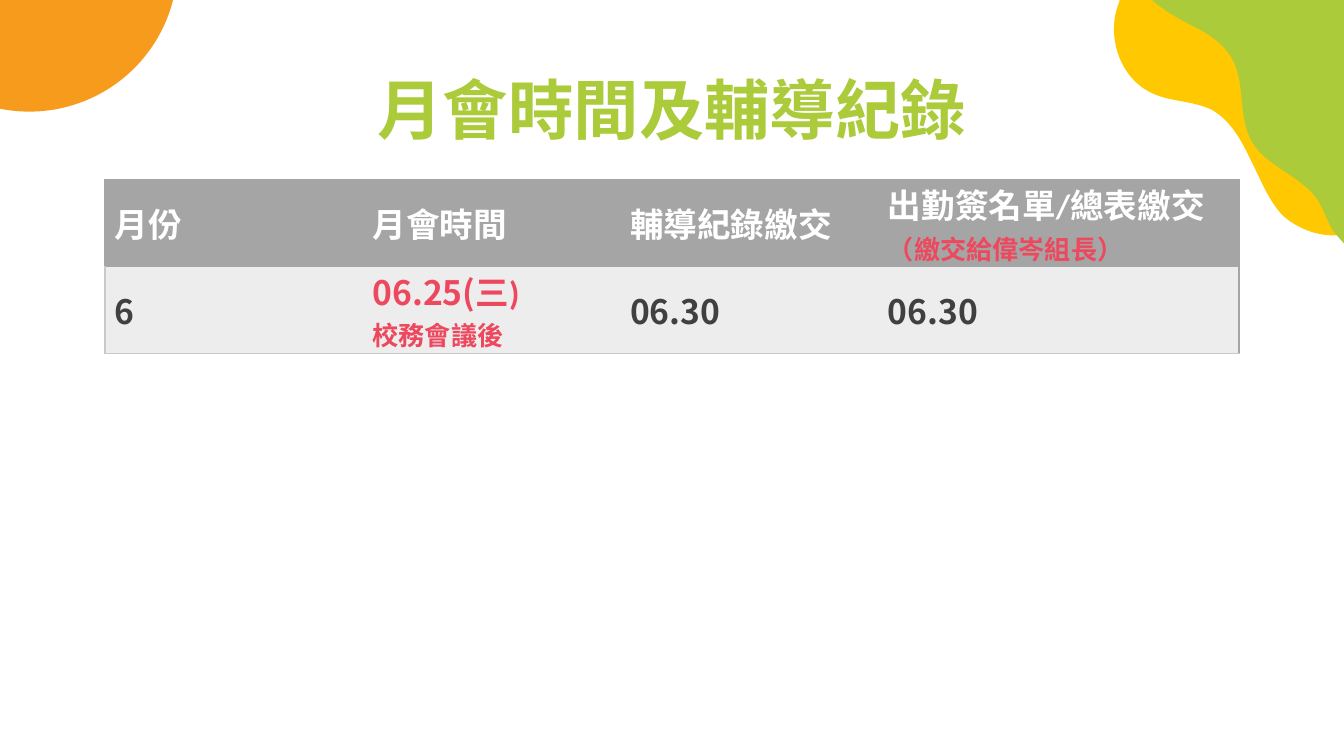
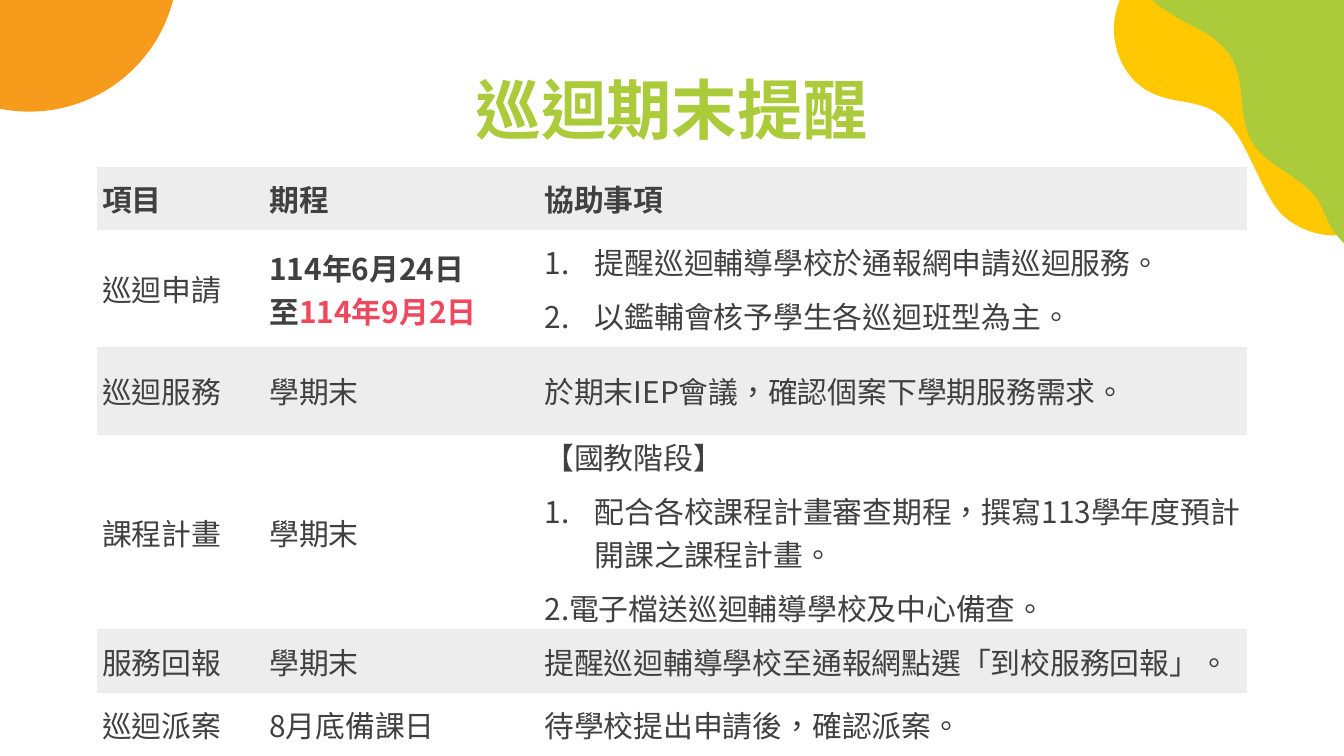
"""Build two slides on monthly meetings and end-of-term itinerant reminders."""
from dataclasses import dataclass

from lxml import etree
from pptx import Presentation
from pptx import util as u
from pptx.dml.color import RGBColor
from pptx.enum import shapes, text
from pptx.oxml.ns import qn

NOTO, CALIBRI = "Noto Sans CJK SC", "Calibri"
GREEN, YELLOW, ORANGE = "ABCB3B", "FFC800", "F79B1D"
INK, RED, WHITE = "404040", "EE485E", "FFFFFF"
GREY, SILVER, PALE = "A5A5A5", "C9C9C9", "EDEDED"
PLAIN_STYLE = "{2D5ABB26-0587-4C30-8999-92F81FD0307C}"
SLIDE_WIDTH, SLIDE_HEIGHT = 25.4, 14.29
HANG = 0.95


@dataclass
class Line:
    """One paragraph: runs of (text, format), and the left indent if numbered."""
    runs: list
    number_indent: float = None


def line(words, number_indent=None, **fmt):
    """Return a paragraph with a single run."""
    return Line([(words, fmt)], number_indent)


WAVES = [
    (YELLOW, [(21.16, 0), (21.16, 0.02), (21.16, 0.03), (21.15, 0.05),
              (20.9, 0.66), (21.15, 1.47), (21.77, 1.76),
              (22.12, 1.93), (22.55, 1.9), (22.91, 2.08),
              (23.27, 2.29), (23.47, 2.67), (23.65, 3.05),
              (23.83, 3.4), (23.98, 3.81), (24.26, 4.09),
              (24.56, 4.34), (24.92, 4.47), (25.3, 4.45),
              (25.32, 4.45), (25.37, 4.42), (25.4, 4.42)]),
    (GREEN, [(21.77, 0), (21.97, 0.18), (22.23, 0.33), (22.48, 0.46),
             (22.73, 0.58), (23.01, 0.74), (23.19, 0.97),
             (23.6, 1.47), (23.34, 2.21), (23.7, 2.74),
             (23.98, 3.15), (24.56, 3.33), (24.87, 3.73),
             (25.02, 3.94), (25.07, 4.17), (25.2, 4.37),
             (25.27, 4.45), (25.32, 4.52), (25.4, 4.6)]),
]

MEETINGS = {
    "title": "月會時間及輔導紀錄",
    "at": (1.98, 3.4), "columns": [4.87, 4.87, 4.87, 6.83], "rows": [1.61, 1.61],
    "margin": 0.19, "fills": [GREY, PALE], "edges": [GREY, SILVER],
    "base": {"size": 18, "bold": True},
    "row_formats": [{"font": CALIBRI, "color": WHITE}, {}],
    "cells": [
        ["月份", "月會時間", "輔導紀錄繳交",
         [line("出勤簽名單/總表繳交"), line("（繳交給偉岑組長）", size=14, color=RED)]],
        ["6",
         [Line([("06.25(", {"color": RED}), ("三)", {"color": RED, "font": CALIBRI})]),
          line("校務會議後", size=14, color=RED, font=CALIBRI)],
         "06.30", "06.30"],
    ],
}

REMINDERS = {
    "title": "巡迴期末提醒",
    "at": (1.83, 3.15), "columns": [3.16, 5.2, 13.38],
    "rows": [1.2, 2.21, 1.66, 1.2, 1.2, 1.2],
    "margin": 0.1, "fills": [PALE, None, PALE, WHITE, PALE, WHITE], "edges": None,
    "base": {"size": 16},
    "row_formats": [{"bold": True}, {}, {}, {}, {}, {}],
    "notes_column": 2,
    "cells": [
        [[line("項目", font=CALIBRI)], "期程", [line("協助事項", font=CALIBRI)]],
        [[line("巡迴申請", font=CALIBRI)],
         [line("114年6月24日", bold=True),
          Line([("至", {"bold": True}), ("114年9月2日", {"bold": True, "color": RED})])],
         [line("提醒巡迴輔導學校於通報網申請巡迴服務。", HANG),
          line("以鑑輔會核予學生各巡迴班型為主。", HANG)]],
        [[line("巡迴服務", font=CALIBRI)], "學期末",
         [Line([("於期末", {"font": CALIBRI}), ("IEP", {}),
                ("會議，確認個案下學期服務需求。", {"font": CALIBRI})])]],
        ["課程計畫", "學期末",
         [line("【國教階段】"),
          line("配合各校課程計畫審查期程，撰寫113學年度預計開課之課程計畫。", HANG),
          line("電子檔送巡迴輔導學校及中心備查。", 0)]],
        ["服務回報", "學期末", "提醒巡迴輔導學校至通報網點選「到校服務回報」。"],
        ["巡迴派案", "8月底備課日", "待學校提出申請後，確認派案。"],
    ],
}


def rgb(value):
    """Turn a hex string into a colour."""
    return RGBColor.from_string(value)


def write(paragraph, words, size=16, color=INK, bold=False, font=NOTO):
    """Add a formatted run of Traditional Chinese to a paragraph."""
    run = paragraph.add_run()
    run.text = words
    run.font.size, run.font.bold, run.font.name = u.Pt(size), bold, font
    run.font.color.rgb = rgb(color)
    properties = run.font._element
    properties.set("lang", "zh-TW")
    etree.SubElement(properties, qn("a:ea")).set("typeface", NOTO)


def number(paragraph, indent):
    """Give a paragraph an automatic number in the ink colour."""
    properties = paragraph._p.get_or_add_pPr()
    properties.set("marL", str(u.Cm(indent)))
    properties.set("indent", str(-u.Cm(HANG)))
    tint = etree.SubElement(properties, qn("a:buClr"))
    etree.SubElement(tint, qn("a:srgbClr")).set("val", INK)
    etree.SubElement(properties, qn("a:buAutoNum")).set("type", "arabicPeriod")


def border(cell, sides):
    """Draw one-point borders, given as (side, colour) in schema order."""
    properties = cell._tc.get_or_add_tcPr()
    for position, (side, color) in enumerate(sides):
        edge = etree.Element(qn(f"a:ln{side}"), w=str(u.Pt(1)))
        fill = etree.SubElement(edge, qn("a:solidFill"))
        etree.SubElement(fill, qn("a:srgbClr")).set("val", color)
        properties.insert(position, edge)


def add_wave(slide, points):
    """Draw a chain of cubic curves closed through the top right corner."""
    start, *rest = [(u.Cm(x), u.Cm(y)) for x, y in points]
    builder = slide.shapes.build_freeform(*start)
    builder.add_line_segments([*rest, (u.Cm(SLIDE_WIDTH), 0)], close=True)
    wave = builder.convert_to_shape()
    segments = wave.element.findall(".//" + qn("a:lnTo"))
    for i in range(0, len(rest), 3):
        first, *others = segments[i:i + 3]
        bend = etree.Element(qn("a:cubicBezTo"))
        first.addprevious(bend)
        for segment in (first, *others):
            bend.append(segment[0])
            segment.getparent().remove(segment)
    return wave


def decorate(slide, layout):
    """Build the corner decorations and move them to the shared layout."""
    corners = [(add_wave(slide, points), color) for color, points in WAVES]
    sun = slide.shapes.add_shape(shapes.MSO_SHAPE.OVAL, u.Cm(-2.25), u.Cm(-3.5),
                                 u.Cm(5.61), u.Cm(5.61))
    for corner, color in [*corners, (sun, ORANGE)]:
        corner.shadow.inherit = False
        corner.fill.solid()
        corner.fill.fore_color.rgb = rgb(color)
        corner.line.fill.background()
        layout.shapes.element.append(corner.element)


def add_title(slide, words):
    """Place and fill the slide title."""
    title = slide.shapes.title
    title.left, title.top, title.width, title.height = map(u.Cm, (2, 1.24, 21.4, 1.6))
    frame = title.text_frame
    frame.auto_size = text.MSO_AUTO_SIZE.NONE
    frame.vertical_anchor = text.MSO_ANCHOR.MIDDLE
    frame.margin_left = frame.margin_right = u.Cm(0.25)
    frame.margin_top = frame.margin_bottom = u.Cm(0.25)
    frame.paragraphs[0].alignment = text.PP_ALIGN.CENTER
    write(frame.paragraphs[0], words, size=35, color=GREEN, bold=True)


def fill_cell(cell, content, margin, fill, is_note, fmt):
    """Format a cell and write its paragraphs."""
    cell.vertical_anchor = text.MSO_ANCHOR.MIDDLE
    cell.margin_left = cell.margin_right = u.Cm(margin)
    cell.margin_top = cell.margin_bottom = 0
    if fill:
        cell.fill.solid()
        cell.fill.fore_color.rgb = rgb(fill)
    lines = [line(content)] if isinstance(content, str) else content
    for i, item in enumerate(lines):
        paragraph = cell.text_frame.add_paragraph() if i else cell.text_frame.paragraphs[0]
        if is_note:
            paragraph.space_before = u.Pt(6)
        else:
            paragraph.alignment = text.PP_ALIGN.JUSTIFY
        if item.number_indent is not None:
            number(paragraph, item.number_indent)
        for words, own in item.runs:
            write(paragraph, words, **{**fmt, **own})


def add_schedule(slide, topic):
    """Add the table of a topic."""
    columns, rows = topic["columns"], topic["rows"]
    holder = slide.shapes.add_table(len(rows), len(columns), *map(u.Cm, topic["at"]),
                                    u.Cm(sum(columns)), u.Cm(sum(rows)))
    holder.element.find(".//" + qn("a:tableStyleId")).text = PLAIN_STYLE
    schedule = holder.table
    schedule.first_row = schedule.horz_banding = False
    for column, width in zip(schedule.columns, columns):
        column.width = u.Cm(width)
    for r, (height, contents) in enumerate(zip(rows, topic["cells"])):
        schedule.rows[r].height = u.Cm(height)
        fmt = {**topic["base"], **topic["row_formats"][r]}
        for c, content in enumerate(contents):
            cell = schedule.cell(r, c)
            is_note = r > 0 and c == topic.get("notes_column")
            fill_cell(cell, content, topic["margin"], topic["fills"][r], is_note, fmt)
            if topic["edges"]:
                edge = topic["edges"][r]
                sides = [("L", edge)] if c == 0 else []
                sides += [("R", GREY)] if c == len(columns) - 1 else []
                border(cell, sides + [("T", GREY), ("B", edge)])


def main():
    """Build and save the presentation."""
    deck = Presentation()
    deck.slide_width, deck.slide_height = u.Cm(SLIDE_WIDTH), u.Cm(SLIDE_HEIGHT)
    layout = deck.slide_layouts[5]
    for i, topic in enumerate((MEETINGS, REMINDERS)):
        slide = deck.slides.add_slide(layout)
        if i == 0:
            decorate(slide, layout)
        add_title(slide, topic["title"])
        add_schedule(slide, topic)
    deck.save("out.pptx")


if __name__ == "__main__":
    main()
